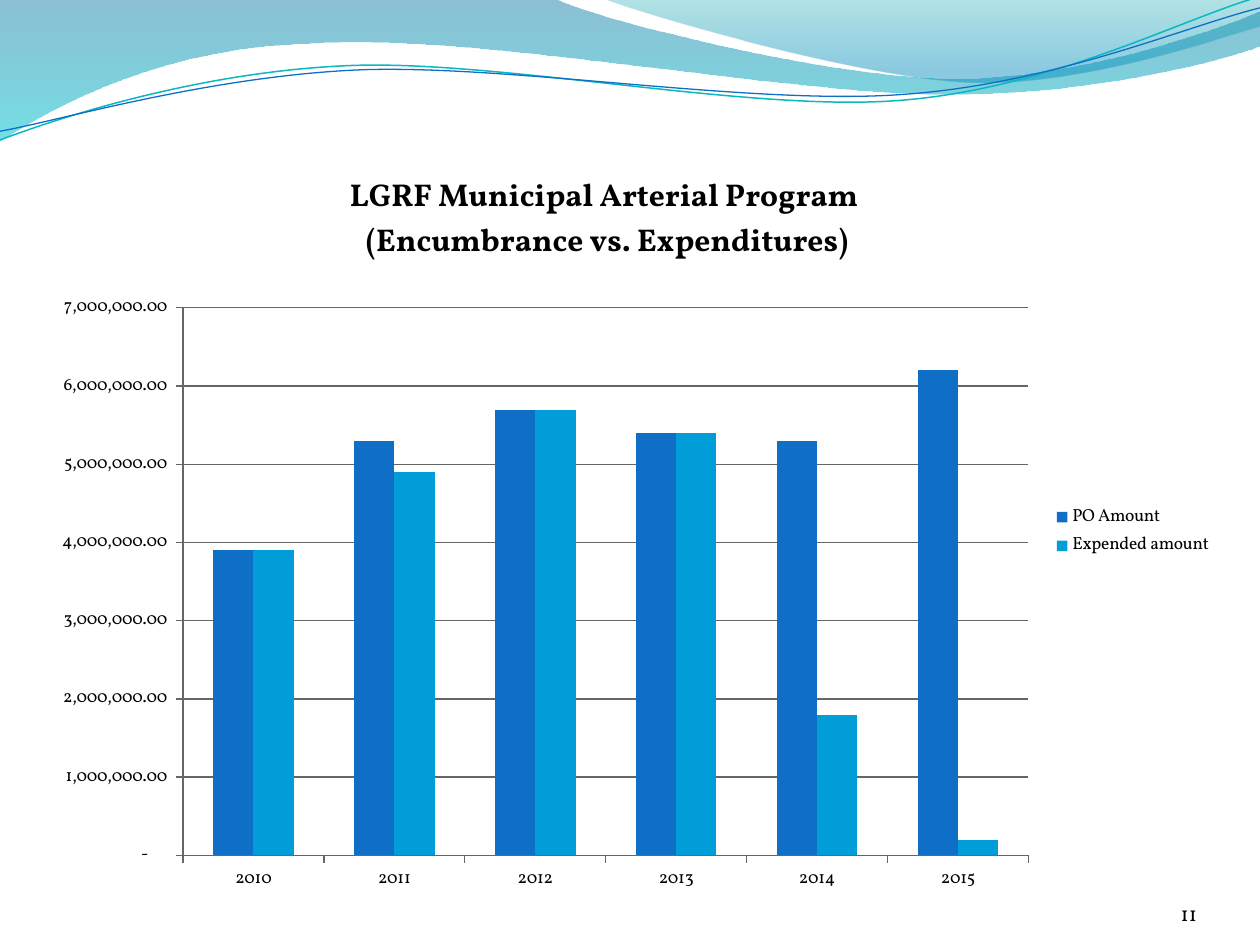
"""Builds a slide with a wave header and a column chart of encumbrance against expenditures."""
import math

import pptx
import pptx.chart.data
import pptx.dml.color
import pptx.enum.chart
import pptx.enum.text
import pptx.oxml
import pptx.oxml.ns
import pptx.util

Pt = pptx.util.Pt

UPPER_WAVE = [
    (0, 0), (317, -0.7),
    (343, 12, 478, 45, 546, 45), (614, 45, 690, 19, 720, 6.5),
    (720.7, 26),
    (708, 32, 626, 55, 537, 54), (448, 54, 275, 20, 185, 24.5),
    (93, 26, 33, 60, -0.7, 81),
]
RIGHT_WAVE = [
    (345, -0.7),
    (366.5, 8, 491, 44.5, 553.5, 47), (616, 49.5, 692, 23, 720, 15),
    (720, 0),
]
TEAL_LINE = [
    (0, 80),
    (34.5, 67, 114, 41, 199.5, 37.5), (284.5, 34, 427, 64, 513, 57.5),
    (600, 51, 675, 11, 718.5, -1.5),
]
BLUE_LINE = [
    (0, 75),
    (34, 69, 118, 44, 204, 40), (290, 36.5, 430, 60.5, 516, 54),
    (602, 48, 677.5, 15, 720, 4.5),
]
TILT = -2.7
YEARS = ["2010", "2011", "2012", "2013", "2014", "2015"]
AMOUNTS = {
    "PO Amount": ("0F6FC6", [3900000, 5300000, 5700000, 5400000, 5300000, 6200000]),
    "Expended amount": ("009DD9", [3900000, 4900000, 5700000, 5400000, 1800000, 200000]),
}
AMOUNT_FORMAT = '_(* #,##0.00_);_(* \\(#,##0.00\\);_(* "-"??_);_(@_)'


def rgb(value):
    """Turn a hex string into a colour."""
    return pptx.dml.color.RGBColor.from_string(value)


def turn(outline, degrees, center_x, center_y):
    """Turn every point of an outline clockwise about a centre."""
    cos, sin = math.cos(math.radians(degrees)), math.sin(math.radians(degrees))
    turned = []
    for part in outline:
        moved = []
        for x, y in zip(part[::2], part[1::2]):
            dx, dy = x - center_x, y - center_y
            moved += [center_x + dx * cos - dy * sin, center_y + dx * sin + dy * cos]
        turned.append(tuple(moved))
    return turned


def place(parent, **fractions):
    """Fix the position of a chart part as fractions of the chart."""
    for old in parent.findall(pptx.oxml.ns.qn("c:layout")):
        parent.remove(old)
    modes = {"xMode": "edge", "yMode": "edge", **fractions}
    if "w" in fractions:
        modes = {"layoutTarget": "inner", **modes}
    settings = "".join(f'<c:{key} val="{value}"/>' for key, value in modes.items())
    layout = pptx.oxml.parse_xml(
        f'<c:layout {pptx.oxml.ns.nsdecls("c")}><c:manualLayout>{settings}'
        "</c:manualLayout></c:layout>"
    )
    text = parent.find(pptx.oxml.ns.qn("c:tx"))
    if text is None:
        parent.insert(0, layout)
    else:
        text.addnext(layout)


class WaveSlide:
    """Holds the style and the current slide."""

    font = "Vollkorn"
    ink = "000000"
    grid = "666666"

    def __init__(self, slide):
        self.slide = slide

    def style(self, font, size, bold=False):
        font.name, font.size, font.bold = self.font, Pt(size), bold
        font.color.rgb = rgb(self.ink)

    def outline(self, parts, close):
        start, *rest = [[(Pt(x), Pt(y)) for x, y in zip(part[::2], part[1::2])]
                        for part in parts]
        builder = self.slide.shapes.build_freeform(*start[0], scale=1.0)
        builder.add_line_segments([point for part in rest for point in part], close=close)
        shape = builder.convert_to_shape()
        shape.shadow.inherit = False
        segments = iter(list(shape._element.spPr.iter(pptx.oxml.ns.qn("a:lnTo"))))
        for part in rest:
            first, *others = [next(segments) for point in part]
            if others:
                first.tag = pptx.oxml.ns.qn("a:cubicBezTo")
            for other in others:
                first.append(other[0])
                other.getparent().remove(other)
        return shape

    def wave(self, parts, stops):
        shape = self.outline(parts, True)
        shape.line.fill.background()
        shape.fill.gradient()
        shape.fill.gradient_angle = 270
        for stop, (position, color, opacity) in zip(shape.fill.gradient_stops, stops):
            stop.position = position
            stop.color.rgb = rgb(color)
        tints = shape._element.spPr.iter(pptx.oxml.ns.qn("a:srgbClr"))
        for tint, (position, color, opacity) in zip(tints, stops):
            tint.append(pptx.oxml.parse_xml(
                f'<a:alpha {pptx.oxml.ns.nsdecls("a")} val="{opacity * 1000}"/>'
            ))

    def curve(self, parts, center, color, width):
        shape = self.outline(turn(parts, -TILT, *center), False)
        shape.rotation = TILT
        shape.fill.background()
        shape.line.color.rgb = rgb(color)
        shape.line.width = Pt(width)

    def page_number(self, number, left, top, width, height):
        frame = self.slide.shapes.add_textbox(
            Pt(left), Pt(top), Pt(width), Pt(height)).text_frame
        frame.word_wrap = True
        frame.margin_left = frame.margin_right = frame.margin_top = frame.margin_bottom = 0
        frame.vertical_anchor = pptx.enum.text.MSO_ANCHOR.BOTTOM
        paragraph = frame.paragraphs[0]
        paragraph.text = number
        paragraph.alignment = pptx.enum.text.PP_ALIGN.RIGHT
        self.style(paragraph.font, 12)

    def columns(self, title, years, amounts, left, top, width, height):
        data = pptx.chart.data.CategoryChartData(number_format="#,##0.00")
        data.categories = years
        for name, (color, values) in amounts.items():
            data.add_series(name, values)
        chart = self.slide.shapes.add_chart(
            pptx.enum.chart.XL_CHART_TYPE.COLUMN_CLUSTERED,
            Pt(left), Pt(top), Pt(width), Pt(height), data).chart
        self.style(chart.font, 10)

        heading = chart.chart_title.text_frame
        heading.text = title
        for paragraph in heading.paragraphs:
            paragraph.alignment = pptx.enum.text.PP_ALIGN.CENTER
            self.style(paragraph.font, 18, bold=True)
        place(chart.chart_title._element, x=0.262, y=0.017)

        chart.has_legend = True
        chart.legend.position = pptx.enum.chart.XL_LEGEND_POSITION.RIGHT
        chart.legend.include_in_layout = False

        plot = chart.plots[0]
        plot.gap_width, plot.overlap = 150, 0
        plot.vary_by_categories = False
        for series, (color, values) in zip(plot.series, amounts.values()):
            series.format.fill.solid()
            series.format.fill.fore_color.rgb = rgb(color)
        place(chart._chartSpace.chart.plotArea, x=0.125, y=0.201, w=0.71, h=0.732)

        amount_axis = chart.value_axis
        amount_axis.minimum_scale, amount_axis.maximum_scale = 0, 7000000
        amount_axis.major_unit = 1000000
        amount_axis.tick_labels.number_format = AMOUNT_FORMAT
        amount_axis.tick_labels.number_format_is_linked = False
        amount_axis.has_major_gridlines = True
        for axis in (amount_axis, chart.category_axis):
            axis.major_tick_mark = pptx.enum.chart.XL_TICK_MARK.OUTSIDE
        for ruled in (amount_axis, chart.category_axis, amount_axis.major_gridlines):
            ruled.format.line.color.rgb = rgb(self.grid)
            ruled.format.line.width = Pt(0.75)


def main():
    deck = pptx.Presentation()
    deck.slide_width, deck.slide_height = Pt(720), Pt(540)
    page = WaveSlide(deck.slides.add_slide(deck.slide_layouts[6]))
    page.wave(UPPER_WAVE, [(0, "0074A1", 45), (1, "00C6CF", 55)])
    page.wave(RIGHT_WAVE, [(0, "00A1A9", 30), (0.8, "008BBF", 45)])
    page.curve(TEAL_LINE, (359.3, 41.4), "0AB8BF", 0.85)
    page.curve(BLUE_LINE, (359.6, 42.5), "0F6FC6", 0.75)
    page.page_number("11", 624, 500.5, 60, 28.75)
    page.columns("LGRF Municipal Arterial Program \n(Encumbrance vs. Expenditures)",
                 YEARS, AMOUNTS, 19.5, 90, 680.5, 427.5)
    deck.save("out.pptx")


if __name__ == "__main__":
    main()
